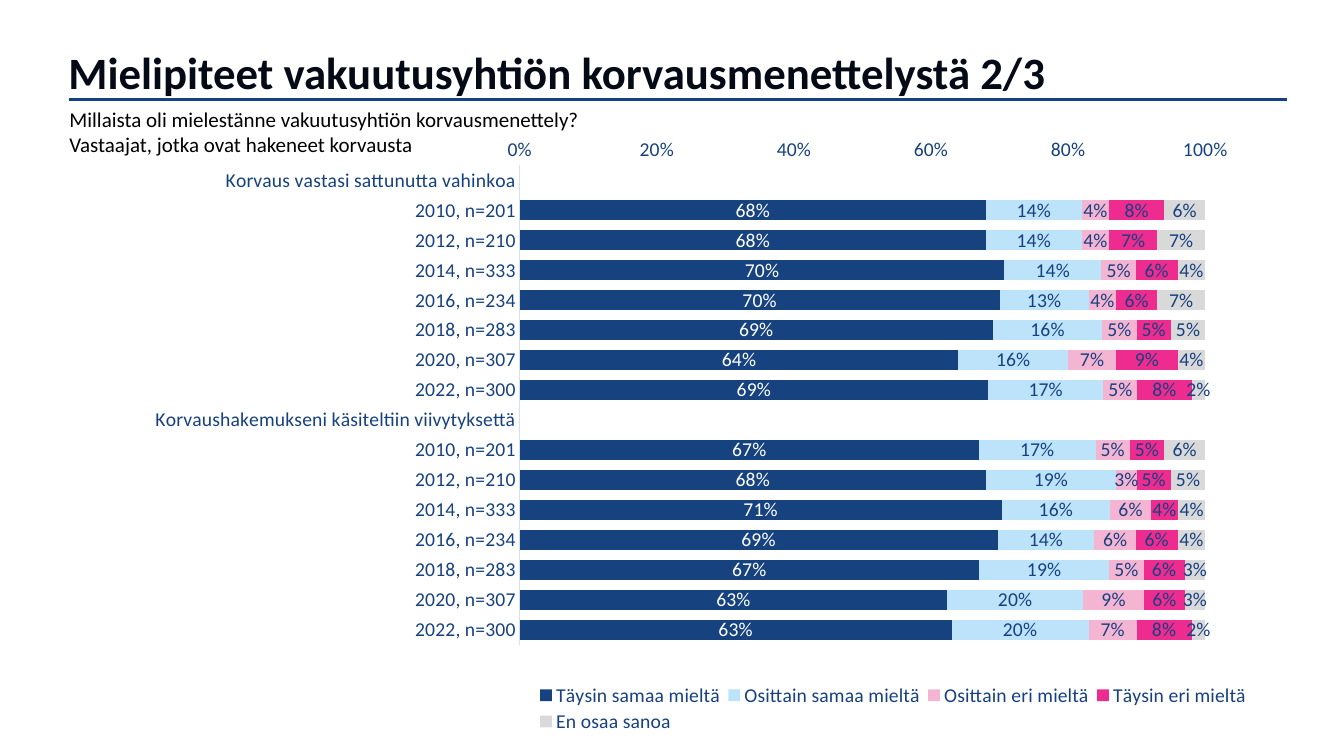
from lxml.etree import SubElement
from pptx import Presentation
from pptx.chart.data import CategoryChartData
from pptx.dml.color import RGBColor
from pptx.enum.chart import (XL_AXIS_CROSSES, XL_CHART_TYPE, XL_LABEL_POSITION,
                             XL_LEGEND_POSITION, XL_TICK_MARK)
from pptx.enum.shapes import MSO_CONNECTOR
from pptx.oxml import parse_xml
from pptx.oxml.ns import nsdecls, qn
from pptx.util import Inches, Pt

FONT = "Calibri"
NAVY = "164180"
TITLE = ["Mielipiteet vakuutusyhtiön korvausmenettelystä 2/3"]
INTRO = ["Millaista oli mielestänne vakuutusyhtiön korvausmenettely?",
         "Vastaajat, jotka ovat hakeneet korvausta"]
WAVES = ["2010, n=201", "2012, n=210", "2014, n=333", "2016, n=234",
         "2018, n=283", "2020, n=307", "2022, n=300"]
SERIES = [
    ("Täysin samaa mieltä", "164280", "FFFFFF"),
    ("Osittain samaa mieltä", "BCE3FA", NAVY),
    ("Osittain eri mieltä", "F4B5D3", NAVY),
    ("Täysin eri mieltä", "EE2C90", NAVY),
    ("En osaa sanoa", "D9D9D9", NAVY),
]
CLAIMS = {
    "Korvaus vastasi sattunutta vahinkoa": [
        (68, 68, 70, 70, 69, 64, 69),
        (14, 14, 14, 13, 16, 16, 17),
        (4, 4, 5, 4, 5, 7, 5),
        (8, 7, 6, 6, 5, 9, 8),
        (6, 7, 4, 7, 5, 4, 2),
    ],
    "Korvaushakemukseni käsiteltiin viivytyksettä": [
        (67, 68, 71, 69, 67, 63, 63),
        (17, 19, 16, 14, 19, 20, 20),
        (5, 3, 6, 6, 5, 9, 7),
        (5, 5, 4, 6, 6, 6, 8),
        (6, 5, 4, 4, 3, 3, 2),
    ],
}


def color(code):
    return RGBColor.from_string(code)


def place(owner, spot, box, inner=False):
    for old in owner.findall(qn("c:layout")):
        owner.remove(old)
    layout = parse_xml(f"<c:layout {nsdecls('c')}><c:manualLayout/></c:layout>")
    rules = [("layoutTarget", "inner")] if inner else []
    rules += [("xMode", "edge"), ("yMode", "edge"), *zip("xywh", box)]
    for tag, val in rules:
        SubElement(layout[0], qn("c:" + tag)).set("val", str(val))
    owner.insert(spot, layout)


def write(slide, box, lines, size, code, bold=False):
    frame = slide.shapes.add_textbox(*map(Inches, box)).text_frame
    frame.word_wrap = True
    frame.text = "\n".join(lines)
    for para in frame.paragraphs:
        para.font.name = FONT
        para.font.size = Pt(size)
        para.font.bold = bold
        para.font.color.rgb = color(code)


def draw_chart(slide):
    data = CategoryChartData(number_format="0%")
    data.categories = [name for claim in CLAIMS for name in (claim, *WAVES)]
    for i, (name, _, _) in enumerate(SERIES):
        data.add_series(name, [val for rows in CLAIMS.values()
                               for val in (None, *(n / 100 for n in rows[i]))])
    chart = slide.shapes.add_chart(
        XL_CHART_TYPE.BAR_STACKED_100, *map(Inches, (0.3, 1.28, 12.14, 6.02)),
        data).chart
    chart.has_title = False
    chart.font.name = FONT
    chart.font.size = Pt(14)
    chart.font.color.rgb = color(NAVY)

    plot = chart.plots[0]
    plot.gap_width = 50
    plot.overlap = 100
    plot.vary_by_categories = False
    for series, (_, fill, ink) in zip(plot.series, SERIES):
        series.format.fill.solid()
        series.format.fill.fore_color.rgb = color(fill)
        labels = series.data_labels
        labels.show_value = True
        labels.number_format = "0%"
        labels.number_format_is_linked = False
        labels.position = XL_LABEL_POSITION.CENTER
        labels.font.name = FONT
        labels.font.size = Pt(14)
        labels.font.color.rgb = color(ink)

    cats, vals = chart.category_axis, chart.value_axis
    for axis in (cats, vals):
        axis.major_tick_mark = axis.minor_tick_mark = XL_TICK_MARK.NONE
        axis.has_major_gridlines = False
    cats.reverse_order = True
    cats.crosses = XL_AXIS_CROSSES.MAXIMUM
    cats.format.line.color.rgb = color("D1E0F7")
    cats.format.line.width = Pt(0.75)
    vals.format.line.fill.background()
    vals.minimum_scale, vals.maximum_scale, vals.major_unit = 0, 1, 0.2
    vals.tick_labels.number_format = "0%"
    vals.tick_labels.number_format_is_linked = False

    chart.has_legend = True
    chart.legend.position = XL_LEGEND_POSITION.BOTTOM
    chart.legend.include_in_layout = False
    root = chart.element
    place(root.find(".//" + qn("c:plotArea")), 0, (0.4, 0.06, 0.56, 0.79), True)
    place(root.find(".//" + qn("c:legend")), 1, (0.41, 0.91, 0.59, 0.09))


def draw_rule(slide):
    rule = slide.shapes.add_connector(
        MSO_CONNECTOR.STRAIGHT, *map(Inches, (0.68, 0.99, 12.76, 0.99)))
    rule.line.color.rgb = color(NAVY)
    rule.line.width = Pt(2.25)
    SubElement(rule.element.spPr, qn("a:effectLst"))


def main():
    deck = Presentation()
    deck.slide_width, deck.slide_height = Inches(13.33), Inches(7.5)
    slide = deck.slides.add_slide(deck.slide_layouts[6])
    draw_chart(slide)
    draw_rule(slide)
    write(slide, (0.58, 0.39, 11.86, 0.64), TITLE, 32, "040B16", True)
    write(slide, (0.59, 1.01, 12.13, 0.61), INTRO, 15, "000000")
    deck.save("out.pptx")


if __name__ == "__main__":
    main()
